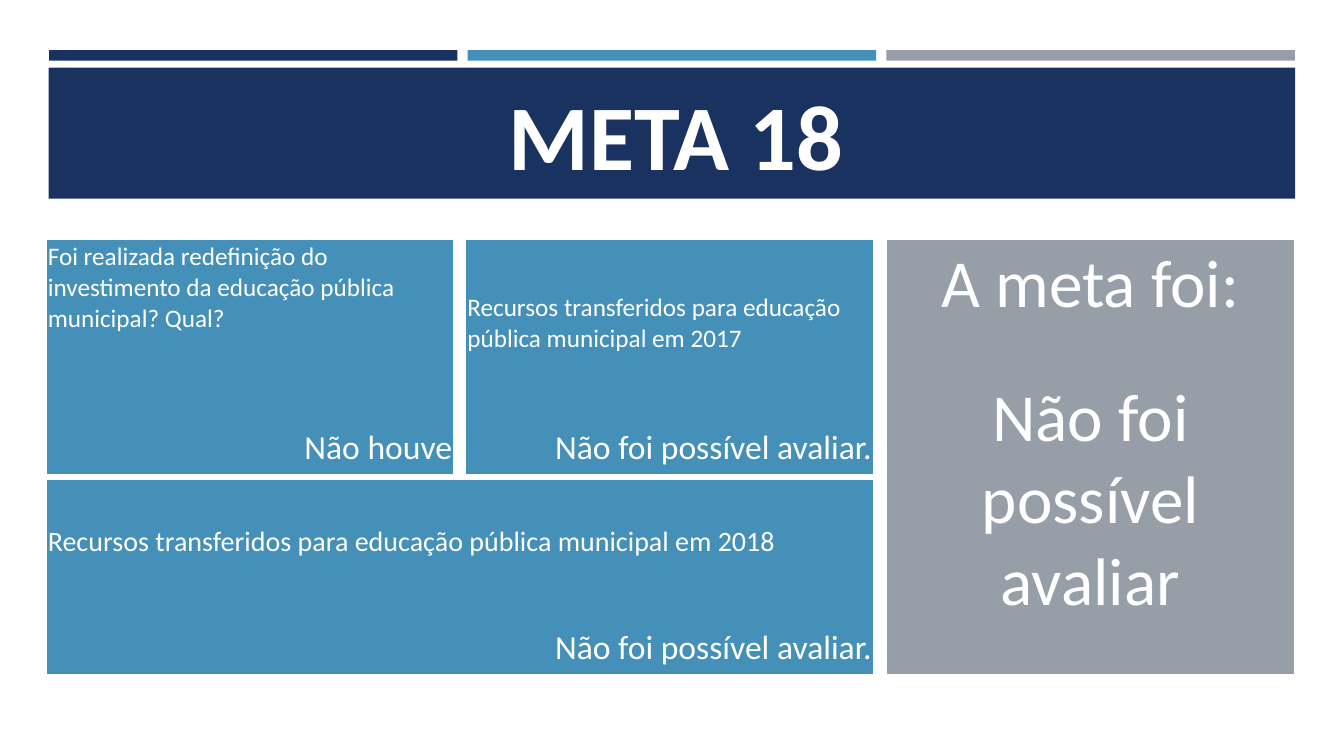
from pptx import Presentation
from pptx import util as u
from pptx.dml import color
from pptx.enum import shapes, text

NAVY, BLUE, GRAY, WHITE = "1A3260", "4590B8", "969FA7", "FFFFFF"
NO_GRID_STYLE = "{2D5ABB26-0587-4C30-8999-92F81FD0307C}"
LEFT, CENTER, RIGHT = text.PP_ALIGN.LEFT, text.PP_ALIGN.CENTER, text.PP_ALIGN.RIGHT
MIDDLE, BOTTOM = text.MSO_ANCHOR.MIDDLE, text.MSO_ANCHOR.BOTTOM


def paint(fill, hex_color):
    fill.solid()
    fill.fore_color.rgb = color.RGBColor.from_string(hex_color)


def write(frame, words, size, align=LEFT, bold=False, font="Calibri", ink=WHITE):
    frame.word_wrap = True
    paragraph = frame.paragraphs[0]
    paragraph.alignment = align
    run = paragraph.add_run()
    run.text = words
    run.font.name = font
    run.font.size = u.Pt(size)
    run.font.bold = bold
    paint(run.font.fill, ink)


class Board:
    """Holds the current slide and its cell margins, in points."""

    def __init__(self, slide, side=0.75, foot=3.6):
        self.slide, self.side, self.foot = slide, side, foot

    def bar(self, x, y, w, h, fill):
        bar = self.slide.shapes.add_shape(
            shapes.MSO_SHAPE.RECTANGLE, u.Pt(x), u.Pt(y), u.Pt(w), u.Pt(h))
        bar.shadow.inherit = False
        paint(bar.fill, fill)
        bar.line.fill.background()

    def heading(self, x, y, w, h, words, size):
        heading = self.slide.shapes.add_textbox(u.Pt(x), u.Pt(y), u.Pt(w), u.Pt(h))
        frame = heading.text_frame
        frame.margin_left = frame.margin_right = 0
        frame.margin_top = frame.margin_bottom = 0
        frame.vertical_anchor = BOTTOM
        write(frame, words, size, align=CENTER, bold=True)

    def card(self, x, y, w, fill, rows):
        """Each row is (height, words, size, alignment, anchor)."""
        height = sum(row[0] for row in rows)
        card = self.slide.shapes.add_table(
            len(rows), 1, u.Pt(x), u.Pt(y), u.Pt(w), u.Pt(height)).table
        card.first_row = card.horz_banding = False
        card._tbl.tblPr[0].text = NO_GRID_STYLE
        for index, (row_height, words, size, align, anchor) in enumerate(rows):
            card.rows[index].height = u.Pt(row_height)
            cell = card.cell(index, 0)
            paint(cell.fill, fill)
            cell.margin_left = cell.margin_right = cell.margin_top = u.Pt(self.side)
            cell.margin_bottom = u.Pt(self.foot)
            cell.vertical_anchor = anchor
            write(cell.text_frame, words, size, align=align)


def main():
    deck = Presentation()
    deck.slide_width, deck.slide_height = u.Pt(960), u.Pt(540)
    board = Board(deck.slides.add_slide(deck.slide_layouts[6]))

    # Header: three stripes above the title band
    for column, stripe_color in enumerate((NAVY, BLUE, GRAY)):
        board.bar(35 + 299.1 * column, 35.9, 291.7, 7.5, stripe_color)
    board.bar(34.8, 48.3, 890.4, 93.7, NAVY)
    board.heading(51.8, 55.4, 862.6, 79.9, "META 18", 66)

    # Question cards
    top, unknown = 171.4, "Não foi possível avaliar."
    board.card(33.4, top, 290.3, BLUE, [
        (70.6, "Foi realizada redefinição do investimento da educação pública "
               "municipal? Qual?", 18, LEFT, BOTTOM),
        (96.5, "Não houve", 24, RIGHT, BOTTOM)])
    resources = "Recursos transferidos para educação pública municipal em "
    board.card(333.1, top, 290.3, BLUE, [
        (122.4, resources + "2017", 18, LEFT, MIDDLE),
        (44.7, unknown, 24, RIGHT, BOTTOM)])
    board.card(33.4, 343.2, 590, BLUE, [
        (90.7, resources + "2018", 20, LEFT, MIDDLE),
        (47.5, unknown, 24, RIGHT, BOTTOM)])

    # Result card
    board.card(633.6, top, 290.6, GRAY, [
        (64.7, "A meta foi:", 48, CENTER, BOTTOM),
        (245.3, "Não foi possível avaliar", 48, CENTER, MIDDLE)])

    deck.save("out.pptx")


if __name__ == "__main__":
    main()
